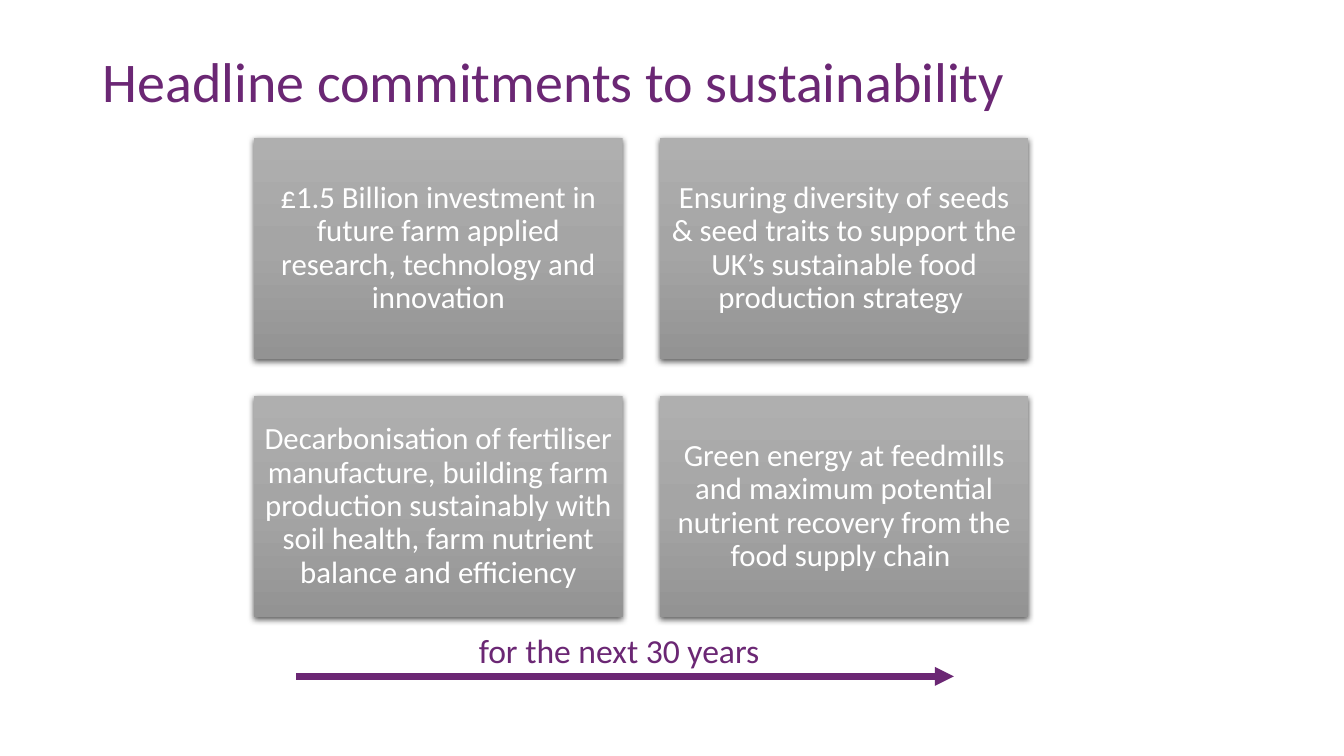
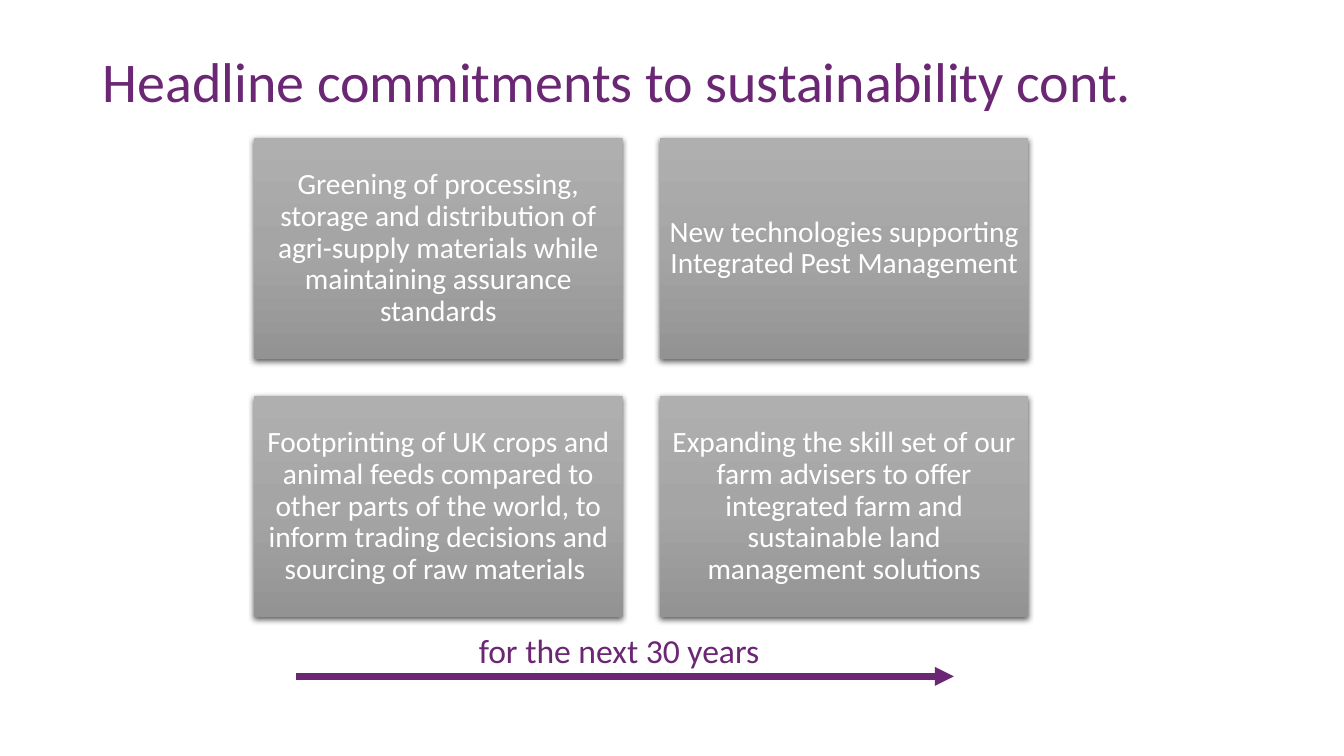
from copy import deepcopy

from lxml import etree
from pptx import Presentation
from pptx.dml.color import RGBColor
from pptx.enum.shapes import MSO_CONNECTOR, MSO_SHAPE
from pptx.enum.text import MSO_ANCHOR, PP_ALIGN
from pptx.oxml.ns import qn
from pptx.util import Inches, Pt

RECTANGLE = MSO_SHAPE.RECTANGLE
STRAIGHT = MSO_CONNECTOR.STRAIGHT
MIDDLE = MSO_ANCHOR.MIDDLE
TOP = MSO_ANCHOR.TOP
LEFT = PP_ALIGN.LEFT
CENTER = PP_ALIGN.CENTER
BLANK_LAYOUT = 6

# Shared style
FONT = "Calibri"
PURPLE = "6B2774"
WHITE = "FFFFFF"
CARD_GRADIENT = ("AFAFAF", "A5A5A5", "939393")

# Shared regions: left, top, width, height in inches
TITLE_BOX = (0.92, 0.28, 11.5, 1.12)
GRID_BOX = (2.52, 1.37, 7.68, 4.75)
TIMELINE_BOX = (2.94, 6.2, 6.52, 0.51)
GRID_COLUMNS = 2
CARD_GAP = 0.37

# Title, card text size, card texts
SLIDES = [
    ("Headline commitments to sustainability", 22, [
        "£1.5 Billion investment in future farm applied research, "
        "technology and innovation",
        "Ensuring diversity of seeds & seed traits to support the UK’s "
        "sustainable food production strategy ",
        "Decarbonisation of fertiliser manufacture, building farm production "
        "sustainably with soil health, farm nutrient balance and efficiency",
        "Green energy at feedmills and maximum potential nutrient recovery "
        "from the food supply chain ",
    ]),
    ("Headline commitments to sustainability cont.", 21, [
        "Greening of processing, storage and distribution of agri-supply "
        "materials while maintaining assurance standards",
        "New technologies supporting Integrated Pest Management ",
        "Footprinting of UK crops and animal feeds compared to other parts of "
        "the world, to inform trading decisions and sourcing of raw materials ",
        "Expanding the skill set of our farm advisers to offer integrated "
        "farm and sustainable land management solutions",
    ]),
]


def color(hex_text):
    return RGBColor.from_string(hex_text)


def write(shape, text, size, hex_text, align=LEFT, anchor=TOP, spacing=1.0, wrap=True):
    frame = shape.text_frame
    frame.text = text
    frame.word_wrap = wrap
    frame.vertical_anchor = anchor
    paragraph = frame.paragraphs[0]
    paragraph.alignment = align
    paragraph.line_spacing = spacing
    font = paragraph.runs[0].font
    font.name = FONT
    font.size = Pt(size)
    font.color.rgb = color(hex_text)


def fill_gradient(shape, hex_texts):
    """Fill from top to bottom with evenly spaced stops."""
    shape.fill.gradient()
    shape.fill.gradient_angle = 270
    stop_list = shape.fill._fill._gradFill.find(qn("a:gsLst"))
    while len(stop_list) < len(hex_texts):
        stop_list.append(deepcopy(stop_list[0]))
    for index, (stop, hex_text) in enumerate(zip(shape.fill.gradient_stops, hex_texts)):
        stop.color.rgb = color(hex_text)
        stop.position = index / (len(hex_texts) - 1)


def add_soft_shadow(shape):
    shape.shadow.inherit = False
    effects = shape._element.spPr.find(qn("a:effectLst"))
    shadow = etree.SubElement(effects, qn("a:outerShdw"), blurRad=str(Pt(4.5)),
                              dist=str(Pt(1.5)), dir="5400000", algn="ctr", rotWithShape="0")
    black = etree.SubElement(shadow, qn("a:srgbClr"), val="000000")
    etree.SubElement(black, qn("a:alpha"), val="63000")


def add_title(page, box, text):
    title = page.shapes.add_textbox(*map(Inches, box))
    write(title, text, 40, PURPLE, anchor=MIDDLE, spacing=0.9)


def add_card(page, box, text, size):
    card = page.shapes.add_shape(RECTANGLE, *map(Inches, box))
    fill_gradient(card, CARD_GRADIENT)
    card.line.fill.background()
    add_soft_shadow(card)
    frame = card.text_frame
    frame.margin_left = frame.margin_right = Inches(0.09)
    frame.margin_top = frame.margin_bottom = Inches(0.09)
    write(card, text, size, WHITE, CENTER, MIDDLE, 0.9)


def add_card_grid(page, box, texts, size):
    left, top, width, height = box
    rows = -(-len(texts) // GRID_COLUMNS)
    card_width = (width - CARD_GAP * (GRID_COLUMNS - 1)) / GRID_COLUMNS
    card_height = (height - CARD_GAP * (rows - 1)) / rows
    for index, text in enumerate(texts):
        row, column = divmod(index, GRID_COLUMNS)
        card_box = (left + column * (card_width + CARD_GAP),
                    top + row * (card_height + CARD_GAP), card_width, card_height)
        add_card(page, card_box, text, size)


def add_timeline(page, box, text):
    left, top, width, height = box
    # Arrow along the bottom edge
    arrow = page.shapes.add_connector(STRAIGHT, Inches(left), Inches(top + height),
                                      Inches(left + width), Inches(top + height))
    arrow.line.color.rgb = color(PURPLE)
    arrow.line.width = Pt(4.5)
    etree.SubElement(arrow.line._get_or_add_ln(), qn("a:tailEnd"), type="triangle")
    etree.SubElement(arrow._element.spPr, qn("a:effectLst"))
    # Label above the arrow
    label = page.shapes.add_textbox(Inches(left + 1.71), Inches(top), Inches(3.09), Inches(0.5))
    write(label, text, 24, PURPLE, wrap=False)


def add_commitments_slide(deck, title, size, texts):
    page = deck.slides.add_slide(deck.slide_layouts[BLANK_LAYOUT])
    add_title(page, TITLE_BOX, title)
    add_card_grid(page, GRID_BOX, texts, size)
    add_timeline(page, TIMELINE_BOX, "for the next 30 years")


def main():
    deck = Presentation()
    deck.slide_width = Inches(13.33)
    deck.slide_height = Inches(7.5)
    for title, size, texts in SLIDES:
        add_commitments_slide(deck, title, size, texts)
    deck.save("out.pptx")


if __name__ == "__main__":
    main()
